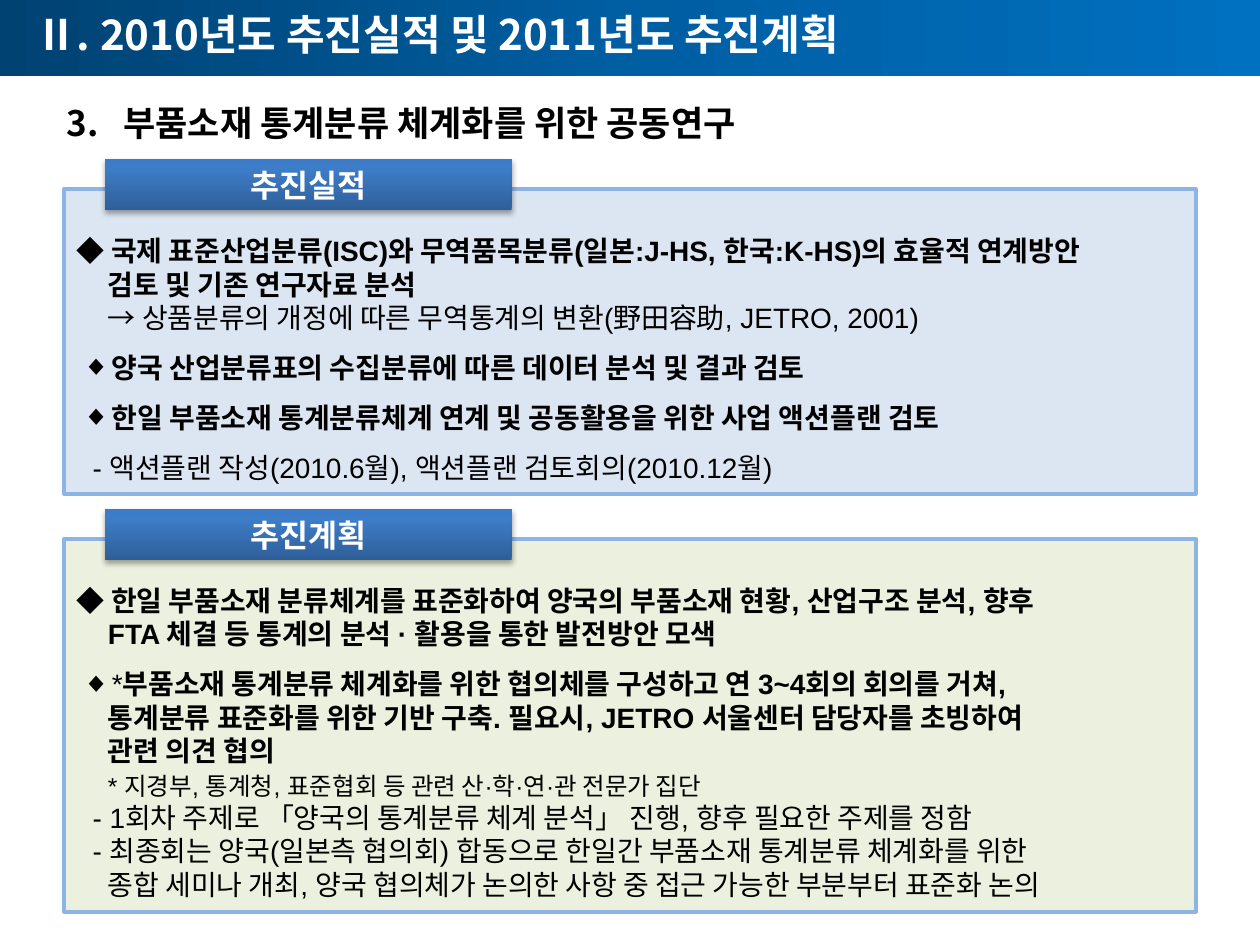
import copy

import lxml.etree
import pptx
import pptx.dml.color
import pptx.enum.shapes
import pptx.enum.text
import pptx.oxml.ns
import pptx.util

Pt = pptx.util.Pt
qn = pptx.oxml.ns.qn
ALIGN = pptx.enum.text.PP_ALIGN
ANCHOR = pptx.enum.text.MSO_ANCHOR

HEX = {
    "white": "FFFFFF", "black": "000000", "edge": "8EB4E3",
    "blue": "DCE6F2", "green": "EBF1DE",
}
BAND = [(0, "004272"), (0.5, "005EA2"), (1, "0070C0")]
TAB = [(0, "2F5F99"), (0.8, "3D7CC7"), (1, "3A7CCB")]
SANS, KOREAN = "Arial", "Noto Sans CJK KR"


def rgb(code):
    return pptx.dml.color.RGBColor.from_string(code)


def add(parent, tag, **attrs):
    node = lxml.etree.SubElement(parent, qn(tag))
    for key, value in attrs.items():
        node.set(key, str(value))
    return node


def write(para, text, size=16, bold=False, color="black", font=SANS):
    run = para.add_run()
    run.text = text
    run.font.size = Pt(size)
    run.font.bold = bold
    run.font.name = font
    run.font.color.rgb = rgb(HEX[color])
    add(run.font._element, "a:ea", typeface=KOREAN)


def indent(para, left=0, first=0, mark=None):
    """Set the margins, and the bullet or its absence."""
    props = para._p.get_or_add_pPr()
    props.set("marL", str(Pt(left)))
    props.set("indent", str(Pt(first)))
    if mark:
        add(props, "a:buFont", typeface=SANS)
        add(props, "a:buChar", char=mark)
    else:
        add(props, "a:buNone")


def blend(shape, stops, angle):
    shape.fill.gradient()
    shape.fill.gradient_angle = angle
    group = shape._element.spPr.find(".//" + qn("a:gsLst"))
    group.append(copy.deepcopy(group[0]))
    for stop, (place, code) in zip(shape.fill.gradient_stops, stops):
        stop.position = place
        stop.color.rgb = rgb(code)


class Deck:
    def __init__(self):
        self.prs = pptx.Presentation()
        self.prs.slide_width, self.prs.slide_height = Pt(720), Pt(540)
        self.slide = self.prs.slides.add_slide(self.prs.slide_layouts[3])

    def setup(self, shape, box, inset=(7.2, 3.6, 7.2, 3.6), anchor=ANCHOR.TOP):
        """Place the shape and return its text frame."""
        shape.left, shape.top, shape.width, shape.height = map(Pt, box)
        frame = shape.text_frame
        frame.word_wrap = True
        frame.auto_size = pptx.enum.text.MSO_AUTO_SIZE.NONE
        frame.vertical_anchor = anchor
        (frame.margin_left, frame.margin_top,
         frame.margin_right, frame.margin_bottom) = map(Pt, inset)
        return frame

    def title(self, text, box):
        shape = self.slide.shapes.title
        frame = self.setup(shape, box, (20, 0, 7.2, 5), ANCHOR.MIDDLE)
        blend(shape, BAND, 0)
        para = frame.paragraphs[0]
        para.alignment = ALIGN.LEFT
        write(para, text, size=24, bold=True, color="white", font=KOREAN)

    def heading(self, number, text, box):
        shape = self.slide.shapes.add_textbox(0, 0, 0, 0)
        para = self.setup(shape, box).paragraphs[0]
        indent(para, 32.5, -32.5)
        write(para, f"{number}\t{text}", size=20, bold=True, font=KOREAN)

    def panel(self, index, box, fill, lines):
        """Each line is (gap, margins, runs)."""
        shape = self.slide.placeholders[index]
        frame = self.setup(shape, box, (7.2, 25.6, 7.2, 0))
        shape.fill.solid()
        shape.fill.fore_color.rgb = rgb(HEX[fill])
        shape.line.color.rgb = rgb(HEX["edge"])
        shape.line.width = Pt(2.25)
        for i, (gap, margins, runs) in enumerate(lines):
            para = frame.add_paragraph() if i else frame.paragraphs[0]
            para.line_spacing = Pt(19.1)
            para.space_before = Pt(gap)
            para.space_after = Pt(0)
            indent(para, **margins)
            for text, style in runs:
                write(para, text, **style)

    def tab(self, text, box):
        kind = pptx.enum.shapes.MSO_SHAPE.RECTANGLE
        shape = self.slide.shapes.add_shape(kind, 0, 0, 0, 0)
        frame = self.setup(shape, box, anchor=ANCHOR.MIDDLE)
        blend(shape, TAB, 90)
        shape.line.fill.background()
        shape.shadow.inherit = False
        effect = shape._element.spPr.find(qn("a:effectLst"))
        shade = add(effect, "a:outerShdw", blurRad=Pt(3.1), dist=Pt(1.8),
                    dir=5400000, rotWithShape=0)
        add(add(shade, "a:srgbClr", val=HEX["black"]), "a:alpha", val=35000)
        para = frame.paragraphs[0]
        para.alignment = ALIGN.CENTER
        write(para, text, size=18, bold=True, color="white", font=KOREAN)


def main():
    bold, plain, small = {"bold": True}, {}, {"size": 14}
    flush, dash, deep = {}, {"left": 9}, {"left": 17.8}
    point = {"left": 20, "first": -17, "mark": "◆"}
    gap = 9.5
    done = [
        (0, flush, [("◆ 국제 표준산업분류(ISC)와 무역품목분류(일본:J-HS, 한국:K-HS)의 효율적 연계방안", bold)]),
        (0, deep, [("검토 및 기존 연구자료 분석", bold)]),
        (0, deep, [("→ 상품분류의 개정에 따른 무역통계의 변환(野田容助, JETRO, 2001)", plain)]),
        (gap, point, [("양국 산업분류표의 수집분류에 따른 데이터 분석 및 결과 검토", bold)]),
        (gap, point, [("한일 부품소재 통계분류체계 연계 및 공동활용을 위한 사업 액션플랜 검토", bold)]),
        (gap, dash, [("- 액션플랜 작성(2010.6월), 액션플랜 검토회의(2010.12월)", plain)]),
    ]
    plan = [
        (0, flush, [("◆ 한일 부품소재 분류체계를 표준화하여 양국의 부품소재 현황, 산업구조 분석, 향후", bold)]),
        (0, deep, [("FTA 체결 등 통계의 분석 · 활용을 통한 발전방안 모색", bold)]),
        (gap, point, [("*", plain), ("부품소재 통계분류 체계화를 위한 협의체를 구성하고 연 3~4회의 회의를 거쳐,", bold)]),
        (0, deep, [("통계분류 표준화를 위한 기반 구축. 필요시, JETRO 서울센터 담당자를 초빙하여", bold)]),
        (0, deep, [("관련 의견 협의", bold)]),
        (0, deep, [("* 지경부, 통계청, 표준협회 등 관련 산·학·연·관 전문가 집단", small)]),
        (0, dash, [("- 1회차 주제로 「양국의 통계분류 체계 분석」 진행, 향후 필요한 주제를 정함", plain)]),
        (0, dash, [("- 최종회는 양국(일본측 협의회) 합동으로 한일간 부품소재 통계분류 체계화를 위한", plain)]),
        (0, deep, [("종합 세미나 개최, 양국 협의체가 논의한 사항 중 접근 가능한 부분부터 표준화 논의", plain)]),
    ]
    deck = Deck()
    deck.title("Ⅱ. 2010년도 추진실적 및 2011년도 추진계획", (0, 0, 720, 43.2))
    deck.heading("3.", "부품소재 통계분류 체계화를 위한 공동연구", (31, 54.7, 556, 31.7))
    parts = [
        (1, "추진실적", 108, 174.2, "blue", done),
        (2, "추진계획", 307.8, 213.1, "green", plan),
    ]
    for index, name, top, height, fill, lines in parts:
        deck.panel(index, (36.7, top, 646.6, height), fill, lines)
        deck.tab(name, (59.8, top - 17, 232.6, 29.2))
    deck.prs.save("out.pptx")


if __name__ == "__main__":
    main()
